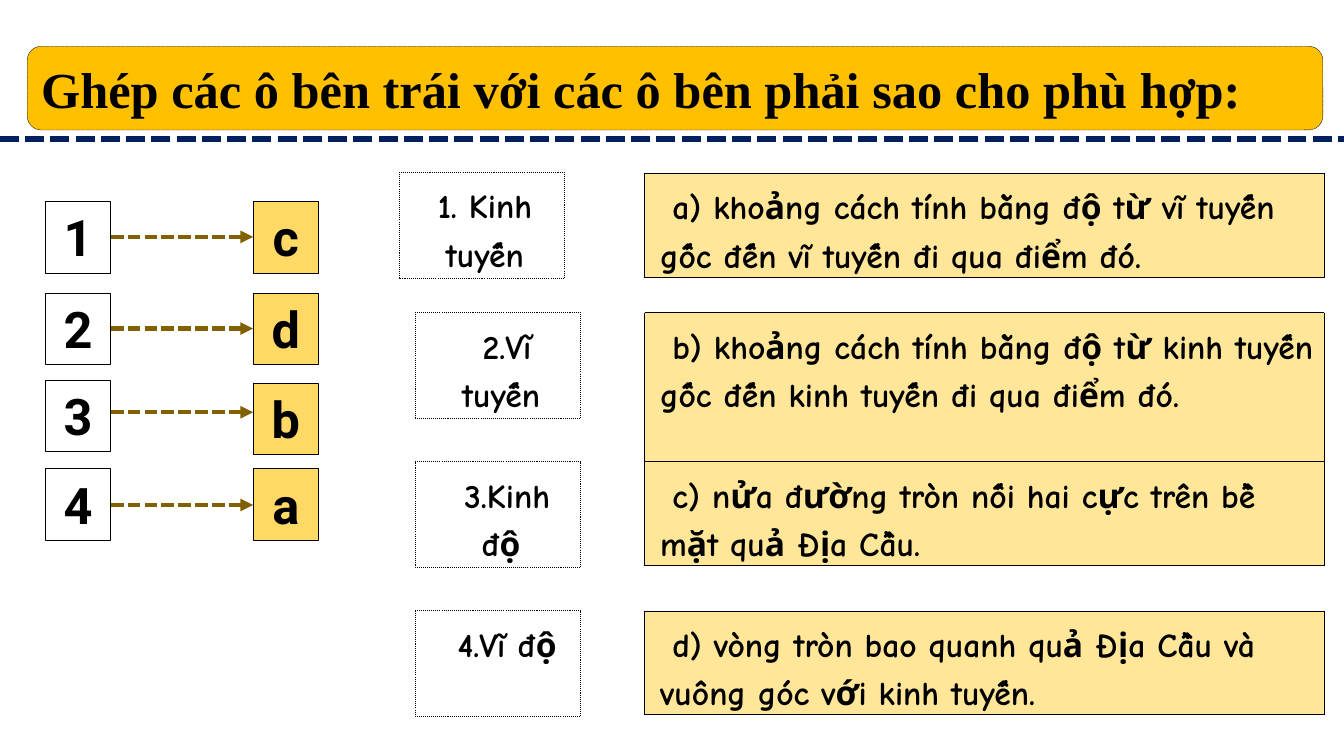
from lxml import etree
from pptx import Presentation
from pptx.dml.color import RGBColor
from pptx.enum import dml, shapes, text
from pptx.oxml import ns
from pptx.util import Inches, Pt

TITLE = "Ghép các ô bên trái với các ô bên phải sao cho phù hợp:"
PAIRS = [
    ("1", "c", 2, 2, 2.35),
    ("2", "d", 2.91, 2.91, 3.26),
    ("3", "b", 3.77, 3.8, 4.09),
    ("4", "a", 4.65, 4.65, 5.01),
]
TERMS = [
    ("1. Kinh tuyến", 3.96, 1.71, 0),
    ("2.Vĩ tuyến", 4.12, 3.1, 0.12),
    ("3.Kinh độ", 4.12, 4.58, 0.12),
    ("4.Vĩ độ", 4.12, 6.06, 0.12),
]
MEANINGS = [
    ("a) khoảng cách tính bằng độ từ vĩ tuyến gốc đến vĩ tuyến đi qua điểm đó.", 1.72, 1.03),
    ("b) khoảng cách tính bằng độ từ kinh tuyến gốc đến kinh tuyến đi qua điểm đó.", 3.1, 1.51),
    ("c) nửa đường tròn nối hai cực trên bề mặt quả Địa Cầu.", 4.58, 1.03),
    ("d) vòng tròn bao quanh quả Địa Cầu và vuông góc với kinh tuyến.", 6.06, 1.03),
]

BLACK = RGBColor(0, 0, 0)
WHITE = RGBColor(255, 255, 255)
NAVY = RGBColor(0x00, 0x20, 0x60)
GOLD = RGBColor(0xFF, 0xC0, 0x00)
AMBER = RGBColor(0xFF, 0xD9, 0x66)
CREAM = RGBColor(0xFF, 0xE6, 0x99)
BROWN = RGBColor(0x80, 0x60, 0x00)
DASH = dml.MSO_LINE.SQUARE_DOT
DOT = dml.MSO_LINE.ROUND_DOT
LEFT, MID = text.PP_ALIGN.LEFT, text.PP_ALIGN.CENTER
TOP, CENTER = text.MSO_ANCHOR.TOP, text.MSO_ANCHOR.MIDDLE
RECT, ROUND = shapes.MSO_SHAPE.RECTANGLE, shapes.MSO_SHAPE.ROUNDED_RECTANGLE

deck = Presentation()
deck.slide_width, deck.slide_height = Inches(13.33), Inches(7.5)
slide = deck.slides.add_slide(deck.slide_layouts[6])


def add_box(words, spot, fill, width, font, size, align=MID, dash=None,
            kind=RECT, anchor=TOP, indent=None):
    box = slide.shapes.add_shape(kind, *map(Inches, spot))
    box.shadow.inherit = False
    if fill is None:
        box.fill.background()
    else:
        box.fill.solid()
        box.fill.fore_color.rgb = fill
    box.line.color.rgb = BLACK
    box.line.width = Pt(width)
    if dash:
        box.line.dash_style = dash
    frame = box.text_frame
    frame.word_wrap = True
    frame.vertical_anchor = anchor
    para = frame.paragraphs[0]
    para.alignment = align
    if indent is not None:
        props = para._p.get_or_add_pPr()
        props.set("marL", str(Inches(0.06)))
        props.set("indent", str(Inches(indent)))
        para.line_spacing = 1.2
    run = para.add_run()
    run.text = words
    run.font.name = font
    run.font.size = Pt(size)
    run.font.bold = True
    run.font.color.rgb = BLACK


def add_line(start, end, y, color, width, arrow=False):
    line = slide.shapes.add_connector(
        shapes.MSO_CONNECTOR.STRAIGHT, Inches(start), Inches(y), Inches(end), Inches(y))
    line.line.color.rgb = color
    line.line.width = Pt(width)
    line.line.dash_style = DASH
    if arrow:
        tail = etree.SubElement(line.line._get_or_add_ln(), ns.qn("a:tailEnd"))
        tail.set("type", "triangle")
    etree.SubElement(line._element.spPr, ns.qn("a:effectLst"))


add_line(0, 13.33, 1.38, NAVY, 4.5)
add_box(TITLE, (0.27, 0.46, 12.85, 0.83), GOLD, 0.25, "Times New Roman", 36,
        LEFT, DASH, ROUND, CENTER)

for words, x, y, indent in TERMS:
    add_box(words, (x, y, 1.64, 1.05), None, 0.75, "Comic Neue", 24,
            dash=DOT, indent=indent)

for words, y, height in MEANINGS:
    add_box(words, (6.39, y, 6.74, height), CREAM, 0.25, "Comic Neue", 24,
            LEFT, DOT, indent=0.12)

for digit, letter, left_y, right_y, line_y in PAIRS:
    add_box(digit, (0.45, left_y, 0.65, 0.71), WHITE, 0.75, "Roboto", 36)
    add_box(letter, (2.51, right_y, 0.65, 0.71), AMBER, 0.5, "Roboto", 36)
    add_line(1.1, 2.51, line_y, BROWN, 3, True)

deck.save("out.pptx")
